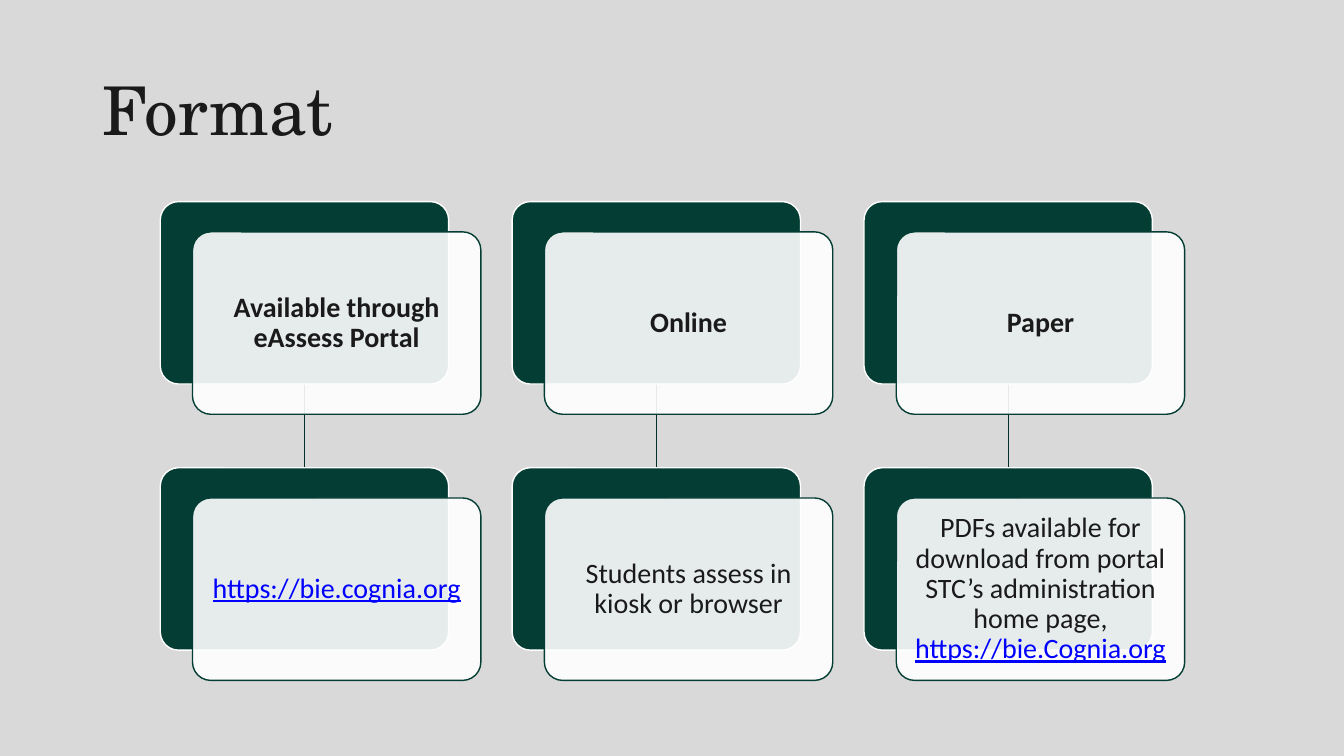
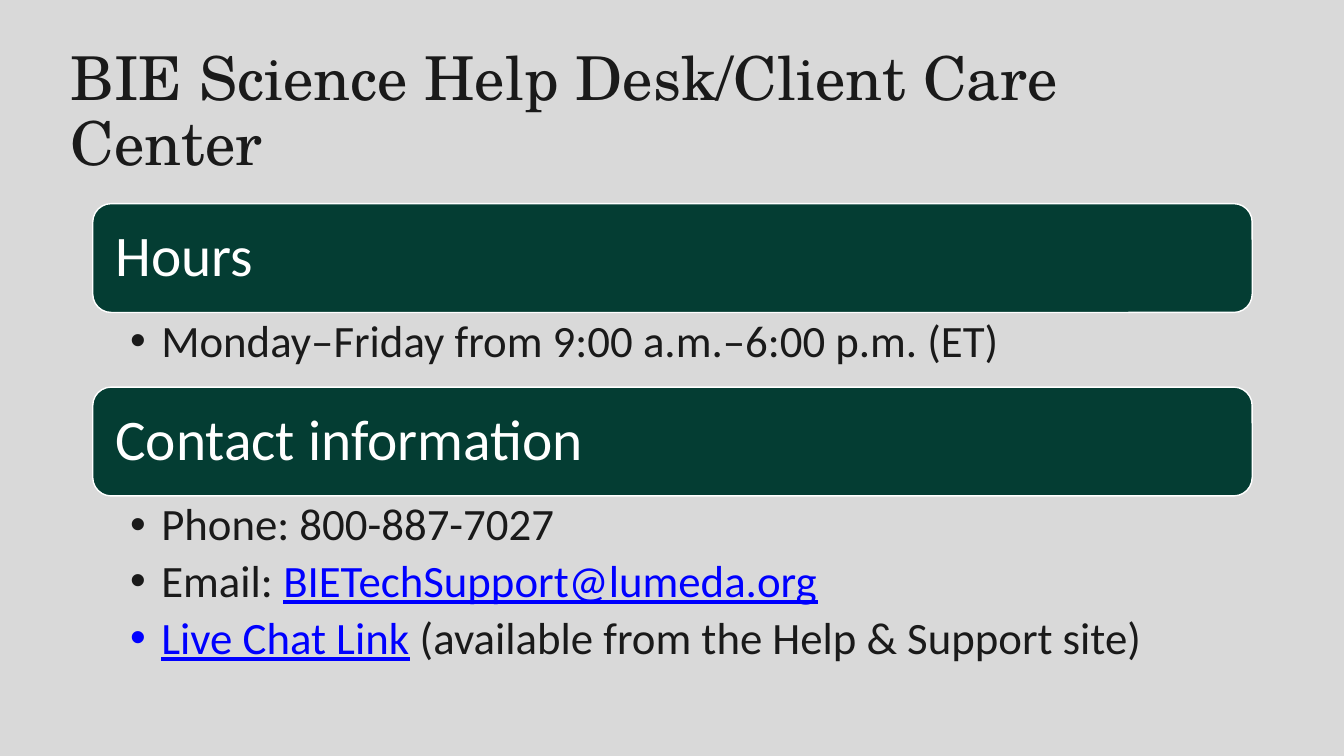
"""Build two slides on the test format and the help desk."""

from dataclasses import dataclass

from lxml.etree import SubElement
from pptx import Presentation
from pptx.dml.color import RGBColor
from pptx.enum.shapes import MSO_CONNECTOR, MSO_SHAPE
from pptx.enum.text import MSO_ANCHOR, MSO_AUTO_SIZE, PP_ALIGN
from pptx.oxml.ns import qn
from pptx.util import Inches, Pt


@dataclass(frozen=True)
class Theme:
    background: RGBColor = RGBColor(0xD9, 0xD9, 0xD9)
    ink: RGBColor = RGBColor(0x1A, 0x1A, 0x1A)
    green: RGBColor = RGBColor(0x04, 0x3D, 0x33)
    connector: RGBColor = RGBColor(0x03, 0x31, 0x29)
    white: RGBColor = RGBColor(0xFF, 0xFF, 0xFF)
    link: RGBColor = RGBColor(0x00, 0x00, 0xFF)
    title_font: str = "TeX Gyre Schola"
    body_font: str = "Calibri"
    card_size: float = 20
    band_size: float = 41
    bullet_size: float = 32
    line_spacing: float = 0.9


theme = Theme()


def add_box(slide, left, top, width, height, fill, line, radius, inset):
    shape = slide.shapes.add_shape(
        MSO_SHAPE.ROUNDED_RECTANGLE, Inches(left), Inches(top), Inches(width), Inches(height)
    )
    shape.shadow.inherit = False
    shape.adjustments[0] = radius
    shape.fill.solid()
    shape.fill.fore_color.rgb = fill
    shape.line.color.rgb = line
    shape.line.width = Pt(1)
    frame = shape.text_frame
    frame.word_wrap = True
    frame.vertical_anchor = MSO_ANCHOR.MIDDLE
    frame.margin_left = frame.margin_right = Inches(inset)
    frame.margin_top = frame.margin_bottom = Inches(inset)
    return shape


def write(paragraph, pieces, size, color, align=PP_ALIGN.LEFT, font=theme.body_font, bold=False):
    paragraph.alignment = align
    paragraph.line_spacing = theme.line_spacing
    for text, is_link in pieces:
        run = paragraph.add_run()
        run.text = text
        run.font.name = font
        run.font.size = Pt(size)
        run.font.bold = bold
        run.font.underline = is_link
        run.font.color.rgb = theme.link if is_link else color


presentation = Presentation()
presentation.slide_width = Inches(13.33)
presentation.slide_height = Inches(7.5)
background = presentation.slide_master.background.fill
background.solid()
background.fore_color.rgb = theme.background

slides = []
for title, left, width, size in [
    ("Format", 0.92, 11.5, 48),
    ("BIE Science Help Desk/Client Care Center", 0.6, 11.81, 43.2),
]:
    slide = presentation.slides.add_slide(presentation.slide_layouts[5])
    heading = slide.shapes.title
    heading.left, heading.top = Inches(left), Inches(0.4)
    heading.width, heading.height = Inches(width), Inches(1.45)
    heading.text_frame.auto_size = MSO_AUTO_SIZE.NONE
    heading.text_frame.word_wrap = True
    heading.text_frame.vertical_anchor = MSO_ANCHOR.MIDDLE
    write(heading.text_frame.paragraphs[0], [(title, False)], size, theme.ink, font=theme.title_font)
    slides.append(slide)
format_slide, help_slide = slides

card_width, card_height = 2.86, 1.81
card_left, card_pitch = 1.59, 3.49
row_tops = [2, 4.64]
offset_x, offset_y = 0.32, 0.3
columns = [
    ("Available through eAssess Portal", [("https://bie.cognia.org", True)]),
    ("Online", [("Students assess in kiosk or browser", False)]),
    (
        "Paper",
        [
            ("PDFs available for download from portal STC’s administration home page, ", False),
            ("https://bie.Cognia.org", True),
        ],
    ),
]

for column, (heading, details) in enumerate(columns):
    left = card_left + column * card_pitch
    center = Inches(left + card_width / 2)
    connector = format_slide.shapes.add_connector(
        MSO_CONNECTOR.STRAIGHT, center, Inches(row_tops[0] + card_height), center, Inches(row_tops[1])
    )
    connector.line.color.rgb = theme.connector
    connector.line.width = Pt(1)
    SubElement(connector.element.spPr, qn("a:effectLst"))
    for top, pieces, bold in zip(row_tops, ([(heading, False)], details), (True, False)):
        add_box(format_slide, left, top, card_width, card_height, theme.green, theme.white, 0.1, 0.08)
        card = add_box(
            format_slide, left + offset_x, top + offset_y, card_width, card_height,
            theme.white, theme.green, 0.1, 0.08,
        )
        color = card.element.spPr.find(qn("a:solidFill"))[0]
        SubElement(color, qn("a:alpha"), val="90000")
        write(card.text_frame.paragraphs[0], pieces, theme.card_size, theme.ink, PP_ALIGN.CENTER, bold=bold)

band_left, band_width, band_height = 0.92, 11.5, 1.08
sections = [
    ("Hours", 2.02, 0.74, [[("Monday–Friday from 9:00 a.m.–6:00 p.m. (ET)", False)]]),
    (
        "Contact information", 3.84, 1.81,
        [
            [("Phone: 800-887-7027", False)],
            [("Email: ", False), ("BIETechSupport@lumeda.org", True)],
            [("Live Chat Link", True), (" (available from the Help & Support site)", False)],
        ],
    ),
]

for heading, top, list_height, items in sections:
    band = add_box(
        help_slide, band_left, top, band_width, band_height, theme.green, theme.white, 0.17, 0.17
    )
    write(band.text_frame.paragraphs[0], [(heading, False)], theme.band_size, theme.white)
    bullets = help_slide.shapes.add_textbox(
        Inches(band_left), Inches(top + band_height), Inches(band_width), Inches(list_height)
    )
    frame = bullets.text_frame
    frame.word_wrap = True
    frame.margin_left, frame.margin_right = Inches(0.37), Inches(0.32)
    frame.margin_top = frame.margin_bottom = Inches(0.06)
    for index, pieces in enumerate(items):
        paragraph = frame.add_paragraph() if index else frame.paragraphs[0]
        properties = paragraph._p.get_or_add_pPr()
        properties.set("marL", str(Inches(0.31)))
        properties.set("indent", str(-Inches(0.31)))
        SubElement(properties, qn("a:buFont"), typeface="Arial")
        SubElement(properties, qn("a:buChar"), char="•")
        paragraph.space_after = Pt(6)
        write(paragraph, pieces, theme.bullet_size, theme.ink)

presentation.save("out.pptx")
